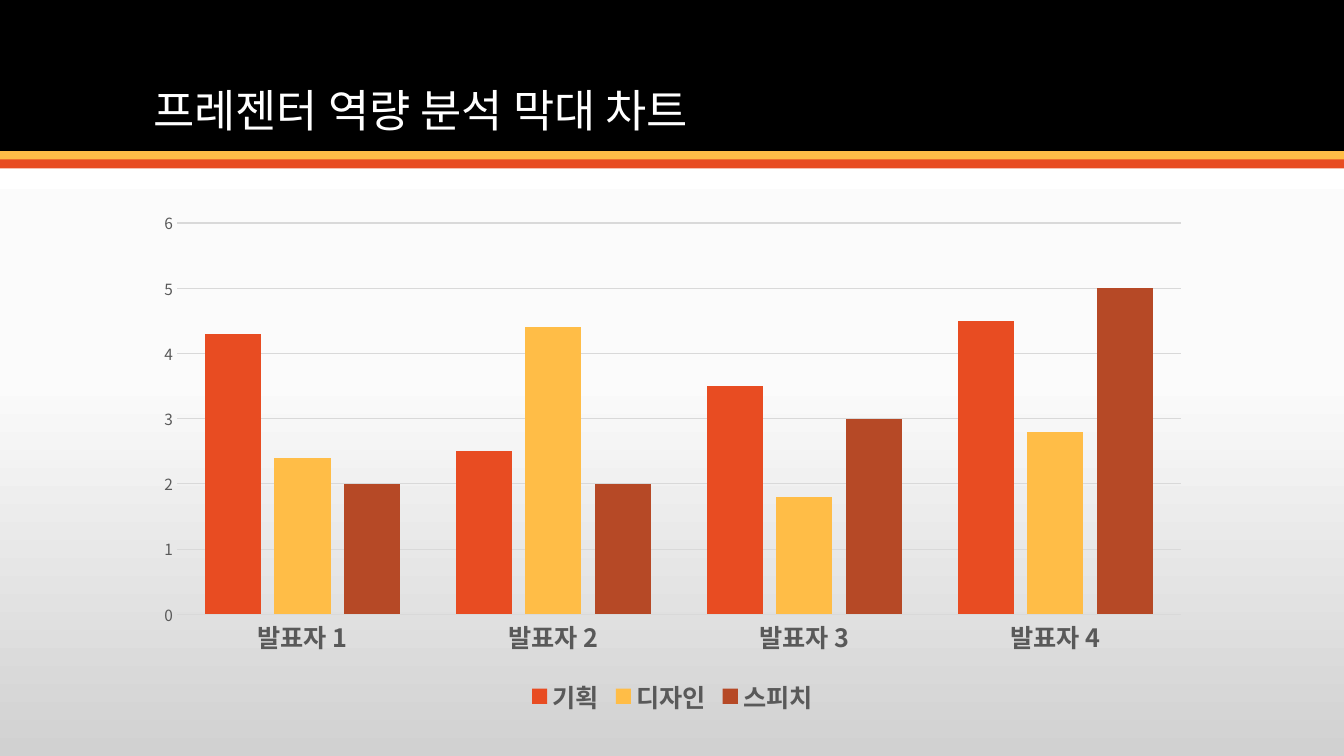
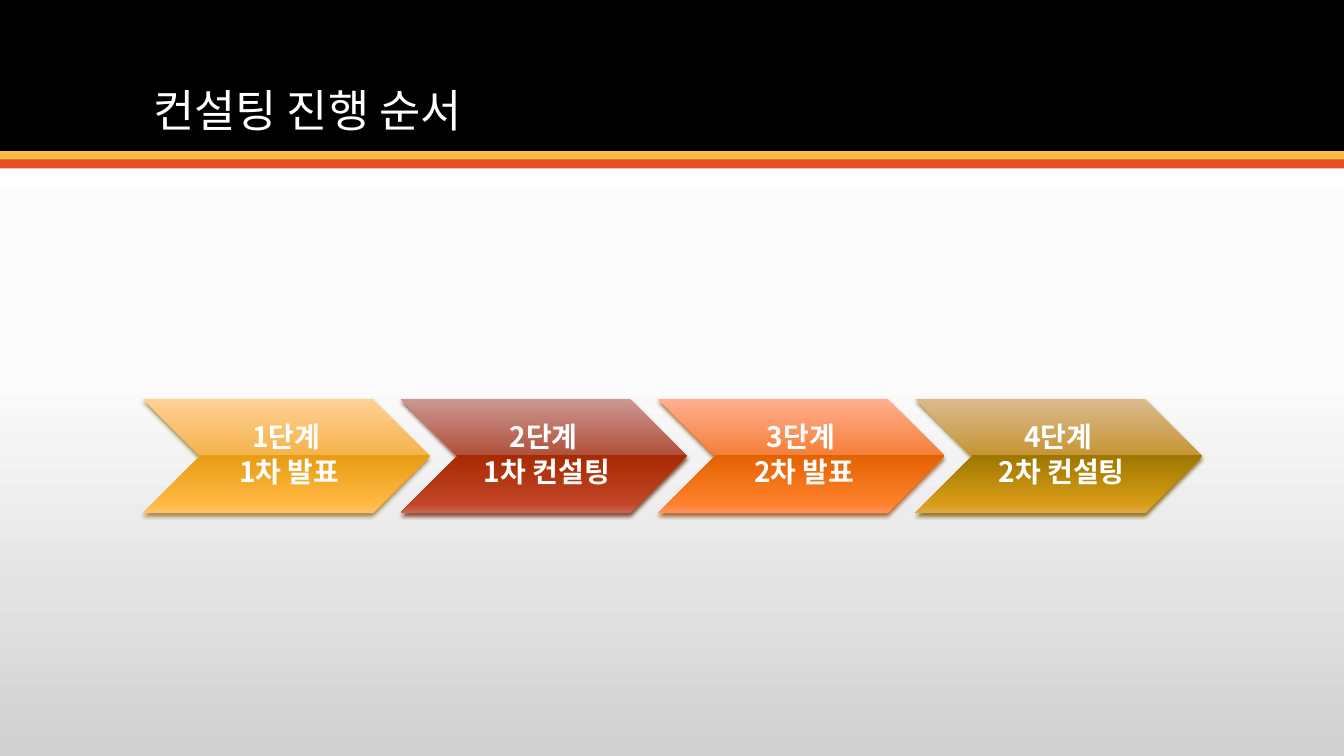
from lxml.etree import SubElement as Sub
from pptx import Presentation
from pptx.chart.data import CategoryChartData as Data
from pptx.dml.color import RGBColor as RGB
from pptx.enum.chart import XL_CHART_TYPE as Kind, XL_LEGEND_POSITION as Spot, XL_TICK_MARK as Tick
from pptx.enum.shapes import MSO_SHAPE as Form
from pptx.enum.text import MSO_ANCHOR as Anchor, PP_ALIGN as Align
from pptx.oxml.ns import qn
from pptx.util import Inches, Pt

FONT = "Noto Sans CJK KR"
BLACK = RGB(0x00, 0x00, 0x00)
WHITE = RGB(0xFF, 0xFF, 0xFF)
RED = RGB(0xE8, 0x4C, 0x22)
GOLD = RGB(0xFF, 0xBD, 0x47)
RUST = RGB(0xB6, 0x49, 0x26)
GREY = RGB(0x59, 0x59, 0x59)
RULE = RGB(0xD9, 0xD9, 0xD9)
WIDE, HIGH = 13.33, 7.5
LEFT, SPAN = 1.42, 10.5
BANDS = [(0, 1.5, BLACK), (1.5, 0.09, GOLD), (1.58, 0.09, RED)]
PAPER = [(0, "FFFFFF"), (50, "FBFBFB"), (100, "D1D1D1")]
STOPS = (0, 49, 49, 92, 100)
CATS = ["발표자 1", "발표자 2", "발표자 3", "발표자 4"]
SERIES = [
    ("기획", (4.3, 2.5, 3.5, 4.5), RED),
    ("디자인", (2.4, 4.4, 1.8, 2.8), GOLD),
    ("스피치", (2, 2, 3, 5), RUST),
]
STEPS = [
    (("1단계 ", "1차 발표"), "FFD197 F4B44C E89C13 FFB942 FFC36A", "9D752C"),
    (("2단계 ", "1차 컨설팅"), "CC9790 B1513C A82A02 C14526 C96654", "702D17"),
    (("3단계 ", "2차 발표"), "FFAF90 F57F39 E36200 FF802C FF945E", "9D5218"),
    (("4단계 ", "2차 컨설팅"), "DBBB8E C69534 9D7600 D99D17 DFA94C", "7E5E00"),
]


def box(x, y, w, h):
    """Turn a box in inches into lengths."""
    return [Inches(v) for v in (x, y, w, h)]


def tint(root, fill, stops):
    """Give a fill a downward gradient with the given stops."""
    fill.gradient()
    grad = root.find(".//" + qn("a:gradFill"))
    row = grad.find(qn("a:gsLst"))
    row.clear()
    for pos, color in stops:
        stop = Sub(row, qn("a:gs"), pos=str(pos * 1000))
        Sub(stop, qn("a:srgbClr"), val=color)
    grad.find(qn("a:lin")).set("ang", "5400000")


def shade(shape, color):
    """Add a soft shadow below a shape."""
    shape.shadow.inherit = False
    fx = shape.element.spPr.find(qn("a:effectLst"))
    drop = Sub(fx, qn("a:outerShdw"), blurRad=str(Pt(3.1)), dist=str(Pt(2)),
               dir="5400000", algn="ctr", rotWithShape="0")
    Sub(Sub(drop, qn("a:srgbClr"), val=color), qn("a:alpha"), val="83000")


def style(font, size, color, bold=False):
    """Set the face, size, colour and weight of a font."""
    font.name, font.size, font.bold = FONT, Pt(size), bold
    font.color.rgb = color


def match(root):
    """Use the Latin face for Korean letters too."""
    for face in list(root.iter(qn("a:latin"))):
        face.addnext(face.makeelement(qn("a:ea"), {"typeface": face.get("typeface")}))


def write(par, text, size, bold=False):
    """Add one white run to a paragraph."""
    par.line_spacing = 0.9
    run = par.add_run()
    run.text = text
    style(run.font, size, WHITE, bold)


def frame(prs, title):
    """Add a slide with the shared backdrop, bands and title."""
    slide = prs.slides.add_slide(prs.slide_layouts[6])
    tint(slide.element, slide.background.fill, PAPER)
    for y, h, color in BANDS:
        band = slide.shapes.add_shape(Form.RECTANGLE, *box(0, y, WIDE, h))
        band.shadow.inherit = False
        band.fill.solid()
        band.fill.fore_color.rgb = color
        band.line.fill.background()
    head = slide.shapes.add_textbox(*box(LEFT, 0.28, SPAN, 1.13)).text_frame
    head.word_wrap = True
    head.vertical_anchor = Anchor.BOTTOM
    write(head.paragraphs[0], title, 32)
    return slide


def bars(slide, x, y, w, h):
    """Draw the clustered columns in the given box."""
    data = Data()
    data.categories = CATS
    for name, vals, _ in SERIES:
        data.add_series(name, vals)
    chart = slide.shapes.add_chart(Kind.COLUMN_CLUSTERED, *box(x, y, w, h), data).chart
    chart.has_title = False
    chart.font.size = Pt(10)
    chart.has_legend = True
    chart.legend.position = Spot.BOTTOM
    chart.legend.include_in_layout = False
    style(chart.legend.font, 18, GREY, True)
    cat, val = chart.category_axis, chart.value_axis
    for axis, size, bold in ((cat, 18, True), (val, 11, False)):
        axis.major_tick_mark = axis.minor_tick_mark = Tick.NONE
        style(axis.tick_labels.font, size, GREY, bold)
    val.minimum_scale, val.maximum_scale, val.major_unit = 0, 6, 1
    val.format.line.fill.background()
    for line in (cat.format.line, val.major_gridlines.format.line):
        line.color.rgb = RULE
        line.width = Pt(0.75)
    plot = chart.plots[0]
    plot.gap_width, plot.overlap = 100, -24
    plot.vary_by_categories = False
    for ser, (_, _, color) in zip(plot.series, SERIES):
        ser.format.fill.solid()
        ser.format.fill.fore_color.rgb = color
    match(chart.element)


def step(slide, x, y, w, h, lines, colors, dark):
    """Draw one glossy chevron with its lines of text."""
    arrow = slide.shapes.add_shape(Form.CHEVRON, *box(x, y, w, h))
    arrow.adjustments[0] = 0.5
    tint(arrow.element, arrow.fill, zip(STOPS, colors.split()))
    arrow.line.fill.background()
    shade(arrow, dark)
    body = arrow.text_frame
    body.word_wrap = True
    body.vertical_anchor = Anchor.MIDDLE
    body.margin_left = Inches(0.09)
    body.margin_right = body.margin_top = body.margin_bottom = Inches(0.03)
    for i, text in enumerate(lines):
        par = body.add_paragraph() if i else body.paragraphs[0]
        par.alignment = Align.CENTER
        par.space_after = Pt(3)
        write(par, text, 20, True)


def flow(slide, x, y, w, h):
    """Spread the chevrons evenly over the given box."""
    wide = 2.84
    pitch = (w - wide) / (len(STEPS) - 1)
    for i, item in enumerate(STEPS):
        step(slide, x + i * pitch, y, wide, h, *item)


def main():
    """Build and save both slides."""
    prs = Presentation()
    prs.slide_width, prs.slide_height = Inches(WIDE), Inches(HIGH)
    bars(frame(prs, "프레젠터 역량 분석 막대 차트"), LEFT, 2, SPAN, 5.14)
    flow(frame(prs, "컨설팅 진행 순서"), LEFT, 3.96, SPAN, 1.13)
    for slide in prs.slides:
        match(slide.element)
    prs.save("out.pptx")


if __name__ == "__main__":
    main()
